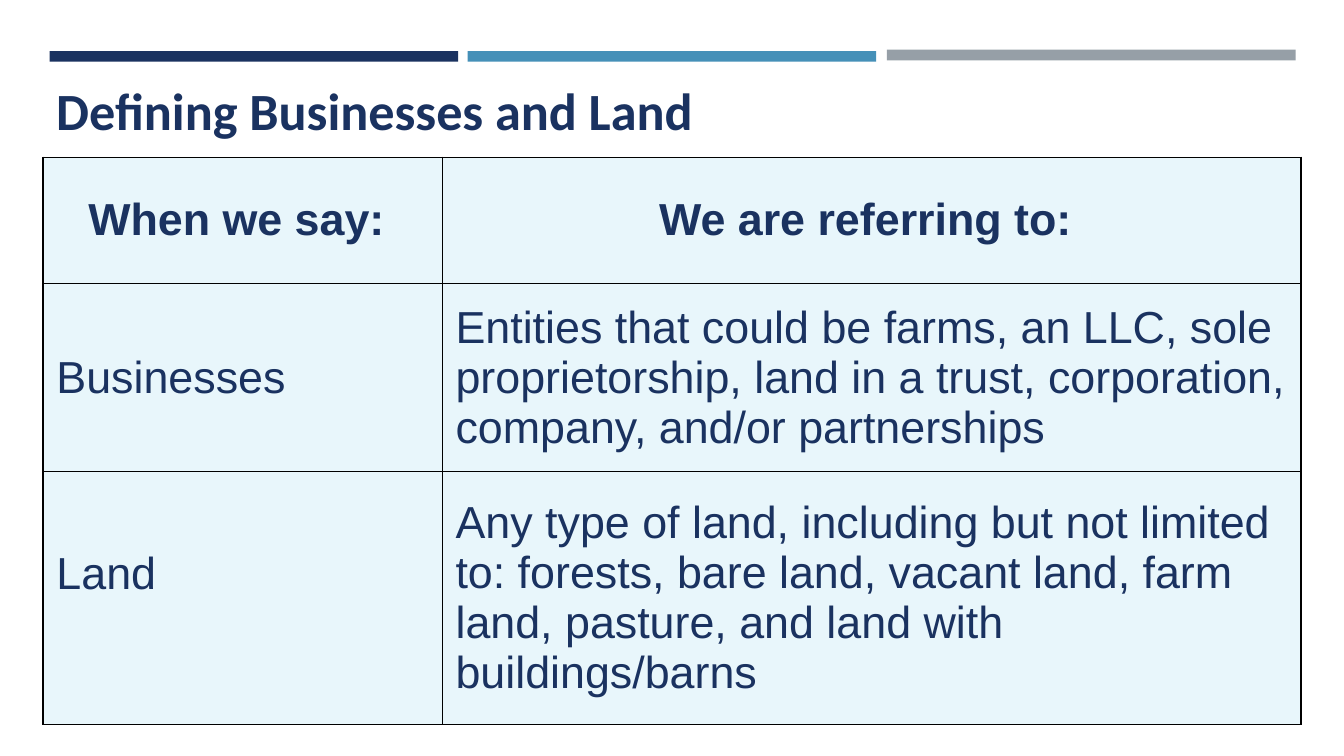
from lxml import etree
from pptx import Presentation
from pptx.dml.color import RGBColor
from pptx.enum import shapes, text
from pptx.oxml.ns import qn
from pptx.util import Inches, Pt

COLORS = {
    "navy": "1A3260",
    "blue": "4590B8",
    "gray": "969FA7",
    "pale": "E8F6FB",
    "border": "000000",
}
BARS = [("navy", 0.37, 0.38), ("gray", 6.6, 0.37), ("blue", 3.48, 0.38)]
ROWS = [
    ("When we say: ", "We are referring to: "),
    ("Businesses",
     "Entities that could be farms, an LLC, sole proprietorship, land in a trust, "
     "corporation, company, and/or partnerships"),
    ("Land",
     "Any type of land, including but not limited to: forests, bare land, vacant land, "
     "farm land, pasture, and land with buildings/barns"),
]
COL_WIDTHS = (2.97, 6.39)
ROW_HEIGHTS = (0.94, 1.38, 1.88)
MARGIN = 0.1


def rgb(name):
    return RGBColor.from_string(COLORS[name])


def style_paragraph(p, font, size, bold):
    for r in p.runs:
        r.font.name = font
        r.font.size = Pt(size)
        r.font.bold = bold
        r.font.color.rgb = rgb("navy")


def set_margins(item):
    """Give a text frame or table cell equal insets on all sides."""
    item.margin_left = item.margin_right = Inches(MARGIN)
    item.margin_top = item.margin_bottom = Inches(MARGIN)


def add_bar(s, color, left, top):
    bar = s.shapes.add_shape(
        shapes.MSO_SHAPE.RECTANGLE,
        Inches(left), Inches(top), Inches(3.04), Inches(0.08))
    bar.shadow.inherit = False
    bar.fill.solid()
    bar.fill.fore_color.rgb = rgb(color)
    bar.line.fill.background()


def add_title(s, title):
    tf = s.shapes.add_textbox(
        Inches(0.32), Inches(0.41), Inches(8.95), Inches(0.76)).text_frame
    tf.word_wrap = True
    set_margins(tf)
    tf.text = title
    p = tf.paragraphs[0]
    p.line_spacing = 1.15
    style_paragraph(p, "Calibri", 28, True)


def add_borders(cell):
    """Draw the four cell edges, placed before the fill as the schema requires."""
    tc_pr = cell._tc.get_or_add_tcPr()
    for i, edge in enumerate(("a:lnL", "a:lnR", "a:lnT", "a:lnB")):
        ln = etree.Element(qn(edge), w=str(Pt(0.75)))
        fill = etree.SubElement(ln, qn("a:solidFill"))
        etree.SubElement(fill, qn("a:srgbClr"), val=COLORS["border"])
        tc_pr.insert(i, ln)


def fill_cell(cell, content, header):
    cell.fill.solid()
    cell.fill.fore_color.rgb = rgb("pale")
    cell.vertical_anchor = text.MSO_ANCHOR.MIDDLE
    set_margins(cell)
    cell.text_frame.text = content
    p = cell.text_frame.paragraphs[0]
    p.alignment = text.PP_ALIGN.CENTER if header else text.PP_ALIGN.LEFT
    style_paragraph(p, "Arial", 24, header)
    add_borders(cell)


def add_definitions(s):
    table = s.shapes.add_table(
        len(ROWS), len(COL_WIDTHS), Inches(0.32), Inches(1.17),
        Inches(sum(COL_WIDTHS)), Inches(sum(ROW_HEIGHTS))).table
    for column, width in zip(table.columns, COL_WIDTHS):
        column.width = Inches(width)
    for i, (height, contents) in enumerate(zip(ROW_HEIGHTS, ROWS)):
        table.rows[i].height = Inches(height)
        for j, content in enumerate(contents):
            fill_cell(table.cell(i, j), content, header=i == 0)
    # "Land" sits level with the second line of its definition.
    table.cell(2, 0).margin_bottom = Inches(0.46)


def main():
    prs = Presentation()
    prs.slide_width = Inches(10)
    prs.slide_height = prs.slide_width * 9 // 16
    s = prs.slides.add_slide(prs.slide_layouts[6])
    for bar in BARS:
        add_bar(s, *bar)
    add_title(s, "Defining Businesses and Land")
    add_definitions(s)
    prs.save("out.pptx")


if __name__ == "__main__":
    main()
